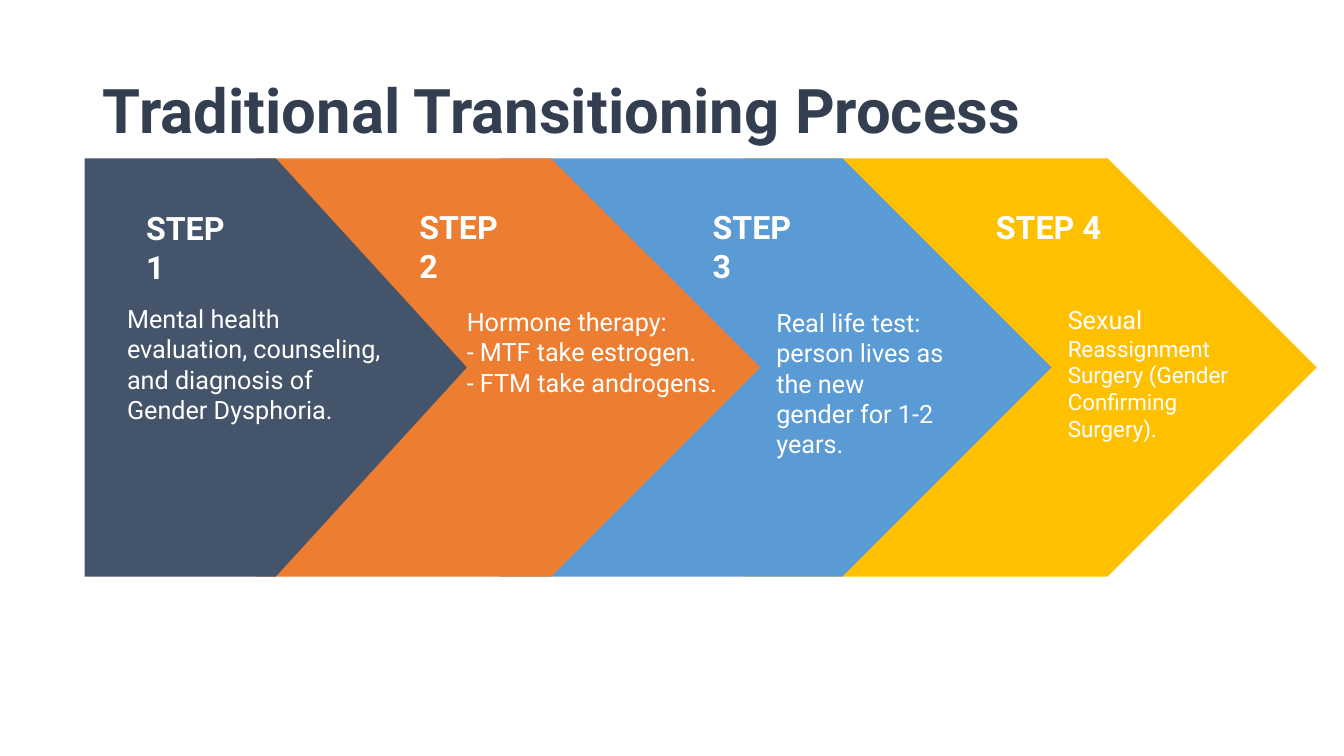
from pptx import Presentation
from pptx import util as u
from pptx.dml.color import RGBColor
from pptx.enum import shapes, text

PX = u.Inches(1) // 100  # 100 px to the inch

WHITE = RGBColor(0xFF, 0xFF, 0xFF)
INK = RGBColor(0x33, 0x3F, 0x50)
SLATE = RGBColor(0x44, 0x54, 0x6A)
ORANGE = RGBColor(0xED, 0x7D, 0x31)
BLUE = RGBColor(0x5B, 0x9B, 0xD5)
GOLD = RGBColor(0xFF, 0xC0, 0x00)
FONT = "Roboto"
TOP, HIGH = 157, 415

# Each step: arrow (left, width), colour, label box, body box, paragraphs.
# Boxes are offsets from the arrow's corner; a paragraph is a list of (text, size).
STEPS = [
    ((84, 379), SLATE, (51, 45, 115, 49), (42, 144, 265, 109),
     [[("Mental health evaluation, counseling, and diagnosis of Gender Dysphoria.", 18)]]),
    ((254, 500), ORANGE, (152, 44, 115, 49), (209, 147, 256, 178),
     [[("Hormone therapy:", 18)], [("- MTF take estrogen.", 18)],
      [("- FTM take androgens.", 18)]]),
    ((496, 547), BLUE, (201, 44, 115, 49), (274, 148, 166, 123),
     [[("Real life test:", 18)],
      [("person lives as the new gender for 1-2 years.", 18)]]),
    ((738, 568), GOLD, (240, 44, 156, 49), (321, 145, 179, 108),
     [[("Sexual", 18),
       (" Reassignment Surgery (Gender Confirming Surgery).", 16)]]),
]


def scale(box):
    return [n * PX for n in box]


def style(run, size, color, bold=False):
    font = run.font
    font.name, font.size, font.bold = FONT, u.Pt(size), bold
    font.color.rgb = color


def add_title(slide, box):
    title = slide.shapes.title
    title.left, title.top, title.width, title.height = scale(box)
    frame = title.text_frame
    frame.text = "Traditional Transitioning Process"
    frame.word_wrap = True
    frame.vertical_anchor = text.MSO_ANCHOR.MIDDLE
    para = frame.paragraphs[0]
    para.alignment = text.PP_ALIGN.LEFT
    para.line_spacing = 0.9
    style(para.runs[0], 44, INK, True)


def add_arrow(slide, box, color):
    arrow = slide.shapes.add_shape(shapes.MSO_SHAPE.PENTAGON, *scale(box))
    arrow.shadow.inherit = False
    arrow.fill.solid()
    arrow.fill.fore_color.rgb = color
    arrow.line.fill.background()


def add_text(slide, box, paras, bold=False, inset=True):
    frame = slide.shapes.add_textbox(*scale(box)).text_frame
    frame.word_wrap = True
    if not inset:
        frame.margin_left = frame.margin_right = 0
        frame.margin_top = frame.margin_bottom = 0
    for i, parts in enumerate(paras):
        para = frame.add_paragraph() if i else frame.paragraphs[0]
        for words, size in parts:
            run = para.add_run()
            run.text = words
            style(run, size, WHITE, bold)


def add_step(slide, num, step):
    (left, wide), color, label, body, paras = step

    def place(box):
        return (left + box[0], TOP + box[1], *box[2:])

    add_arrow(slide, (left, TOP, wide, HIGH), color)
    add_text(slide, place(label), [[(f"STEP {num}", 23)]], bold=True)
    add_text(slide, place(body), paras, inset=False)


def main():
    deck = Presentation()
    deck.slide_width, deck.slide_height = scale((1333, 750))
    slide = deck.slides.add_slide(deck.slide_layouts[5])
    add_title(slide, (92, 40, 1150, 145))
    # The last step lies at the back, so that each arrow overlaps the next
    for num, step in reversed(list(enumerate(STEPS, 1))):
        add_step(slide, num, step)
    deck.save("out.pptx")


if __name__ == "__main__":
    main()
